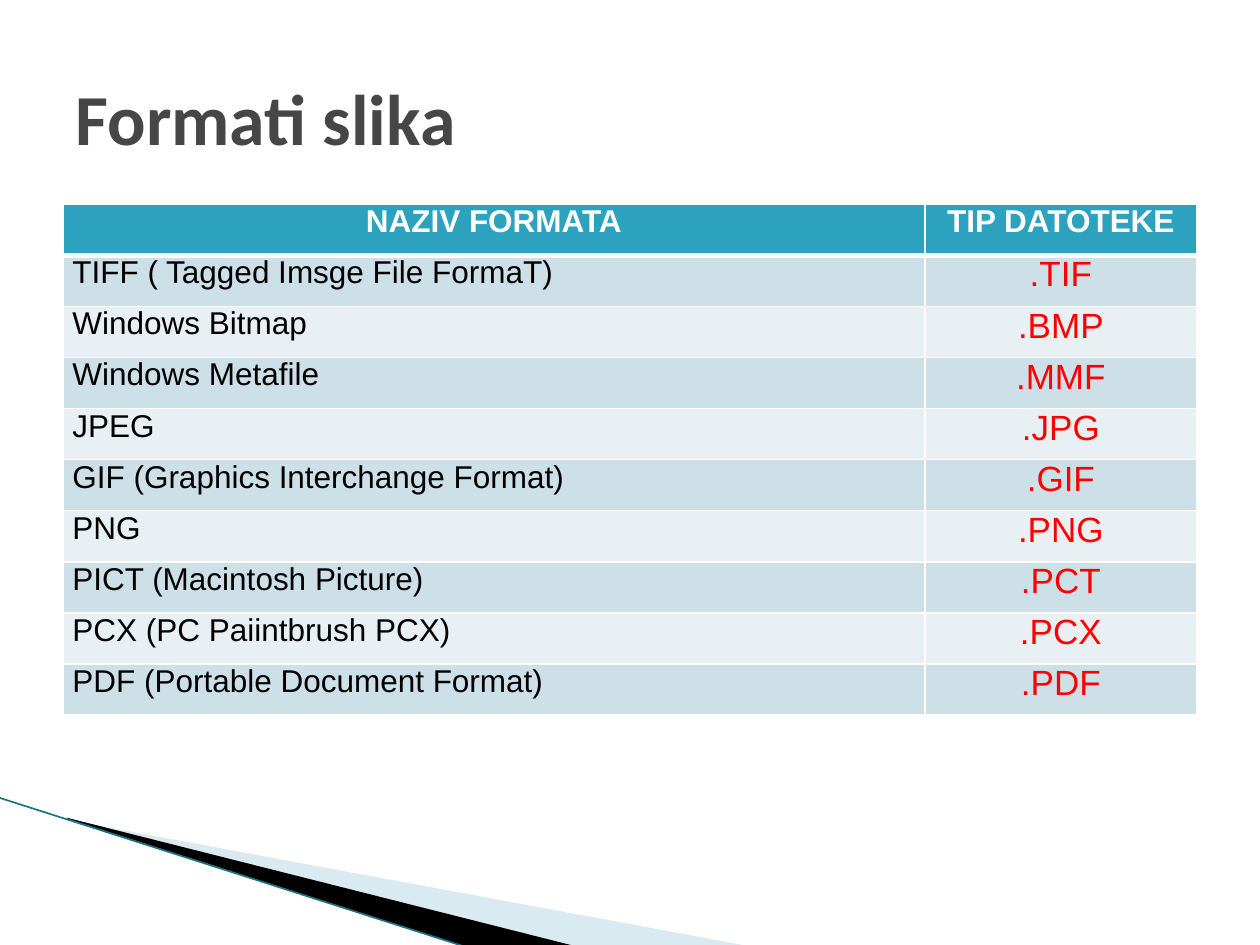
"""Build a slide that lists image formats and their file types."""
from lxml import etree
from pptx import Presentation, util as u
from pptx.dml.color import RGBColor
from pptx.enum import shapes, text
from pptx.oxml import parse_xml
from pptx.oxml.ns import nsdecls, qn

COLORS = {
    "title": "464646", "header": "2DA2BF", "band_dark": "CDE0E8",
    "band_light": "E8F0F4", "white": "FFFFFF", "black": "000000",
    "type": "FF0000", "pale_wedge": "A0CBDC", "edge": "1C7288",
}
HEADINGS = ("NAZIV FORMATA", "TIP DATOTEKE")
FORMATS = (
    ("TIFF ( Tagged Imsge File FormaT)", ".TIF"),
    ("Windows Bitmap", ".BMP"),
    ("Windows Metafile", ".MMF"),
    ("JPEG", ".JPG"),
    ("GIF (Graphics Interchange Format)", ".GIF"),
    ("PNG", ".PNG"),
    ("PICT (Macintosh Picture)", ".PCT"),
    ("PCX (PC Paiintbrush PCX)", ".PCX"),
    ("PDF (Portable Document Format)", ".PDF"),
)
COLUMN_WIDTHS = (6.84, 2.16)
ROW_HEIGHT = u.Pt(29.2)
CELL_INSET = u.Pt(5.4)


def rgb(name):
    """Return the named colour."""
    return RGBColor.from_string(COLORS[name])


def set_attributes(target, values):
    """Set each attribute of the target from a dict."""
    for name, value in values.items():
        setattr(target, name, value)


def write_text(frame, content, color, size, font="Arial", bold=False, align="LEFT"):
    """Write one formatted paragraph into a text frame."""
    paragraph = frame.paragraphs[0]
    paragraph.alignment = getattr(text.PP_ALIGN, align)
    run = paragraph.add_run()
    run.text = content
    set_attributes(run.font, {"name": font, "size": u.Pt(size), "bold": bold})
    run.font.color.rgb = rgb(color)


def set_frame(shape, frame):
    """Give a freeform a frame in inches while its outline stays in place."""
    left, top, width, height = map(u.Inches, frame)
    outline = shape._element.find(".//" + qn("a:path"))
    for point in outline.iter(qn("a:pt")):
        point.set("x", str(int(point.get("x")) + shape.left - left))
        point.set("y", str(int(point.get("y")) + shape.top - top))
    outline.set("w", str(width))
    outline.set("h", str(height))
    set_attributes(shape, {
        "left": left, "top": top, "width": width, "height": height})


def add_wedge(slide, frame, points, color, opacity=100):
    """Add a filled outline through points given in inches."""
    corners = [(u.Inches(x), u.Inches(y)) for x, y in points]
    builder = slide.shapes.build_freeform(*corners[0])
    builder.add_line_segments(corners[1:], close=True)
    shape = builder.convert_to_shape()
    set_frame(shape, frame)
    shape.shadow.inherit = False
    shape.fill.solid()
    shape.fill.fore_color.rgb = rgb(color)
    shape.line.fill.background()
    if opacity < 100:
        fill_color = shape.fill._xPr.find(qn("a:solidFill"))[0]
        etree.SubElement(fill_color, qn("a:alpha"), val=str(opacity * 1000))


def add_edge(slide, start, end, color, width):
    """Add a straight line between two points given in inches."""
    ends = [u.Inches(value) for value in (*start, *end)]
    connector = slide.shapes.add_connector(shapes.MSO_CONNECTOR.STRAIGHT, *ends)
    connector.line.color.rgb = rgb(color)
    connector.line.width = u.Pt(width)
    etree.SubElement(connector._element.spPr, qn("a:effectLst"))


def add_title(slide, content):
    """Add the slide title."""
    box = slide.shapes.add_textbox(*map(u.Inches, (0.5, 0.3, 9, 1.25)))
    set_attributes(box.text_frame, {
        "word_wrap": True, "vertical_anchor": text.MSO_ANCHOR.MIDDLE})
    write_text(box.text_frame, content, "title", 41, "Calibri", True)


def set_borders(cell, widths):
    """Give a cell white borders, with widths in points by side."""
    properties = cell._tc.get_or_add_tcPr()
    for side, width in widths.items():
        properties.append(parse_xml(
            f'<a:ln{side} {nsdecls("a")} w="{u.Pt(width)}"><a:solidFill>'
            f'<a:srgbClr val="{COLORS["white"]}"/></a:solidFill></a:ln{side}>'))


def format_cell(cell, content, fill, below=1, **style):
    """Fill one table cell and write its text."""
    set_attributes(cell, {
        "margin_left": CELL_INSET, "margin_right": CELL_INSET,
        "margin_top": 0, "margin_bottom": 0})
    set_borders(cell, {"L": 1, "R": 1, "T": 1, "B": below})
    cell.fill.solid()
    cell.fill.fore_color.rgb = rgb(fill)
    write_text(cell.text_frame, content, **style)


def add_format_table(slide):
    """Add the table of formats with a header and alternating bands."""
    row_count = len(FORMATS) + 1
    table = slide.shapes.add_table(
        row_count, len(HEADINGS), u.Inches(0.5), u.Inches(1.62),
        u.Inches(sum(COLUMN_WIDTHS)), ROW_HEIGHT * row_count).table
    for column, width in zip(table.columns, COLUMN_WIDTHS):
        column.width = u.Inches(width)
    for row in table.rows:
        row.height = ROW_HEIGHT
    for index, heading in enumerate(HEADINGS):
        format_cell(table.cell(0, index), heading, "header", below=3,
                    color="white", size=18, bold=True, align="CENTER")
    for index, (name, file_type) in enumerate(FORMATS, 1):
        band = "band_dark" if index % 2 else "band_light"
        format_cell(table.cell(index, 0), name, band, color="black", size=18)
        format_cell(table.cell(index, 1), file_type, band,
                    color="type", size=20, align="CENTER")


def main():
    """Build and save the presentation."""
    presentation = Presentation()
    set_attributes(presentation, {
        "slide_width": u.Inches(10), "slide_height": u.Inches(7.5)})
    slide = presentation.slides.add_slide(presentation.slide_layouts[6])
    add_wedge(slide, (0.78, 5.47, 4.16, 1.58),
              ((0.55, 6.51), (5.95, 7.51), (4.56, 7.51), (0.55, 6.5)),
              "pale_wedge", 40)
    add_wedge(slide, (-0.06, 6.33, 4.16, 0.92),
              ((0.53, 6.49), (4.57, 7.51), (3.72, 7.52), (0.54, 6.5)), "black")
    add_edge(slide, (-0.01, 6.33), (3.71, 7.52), "edge", 0.95)
    add_format_table(slide)
    add_title(slide, "Formati slika")
    presentation.save("out.pptx")


if __name__ == "__main__":
    main()
